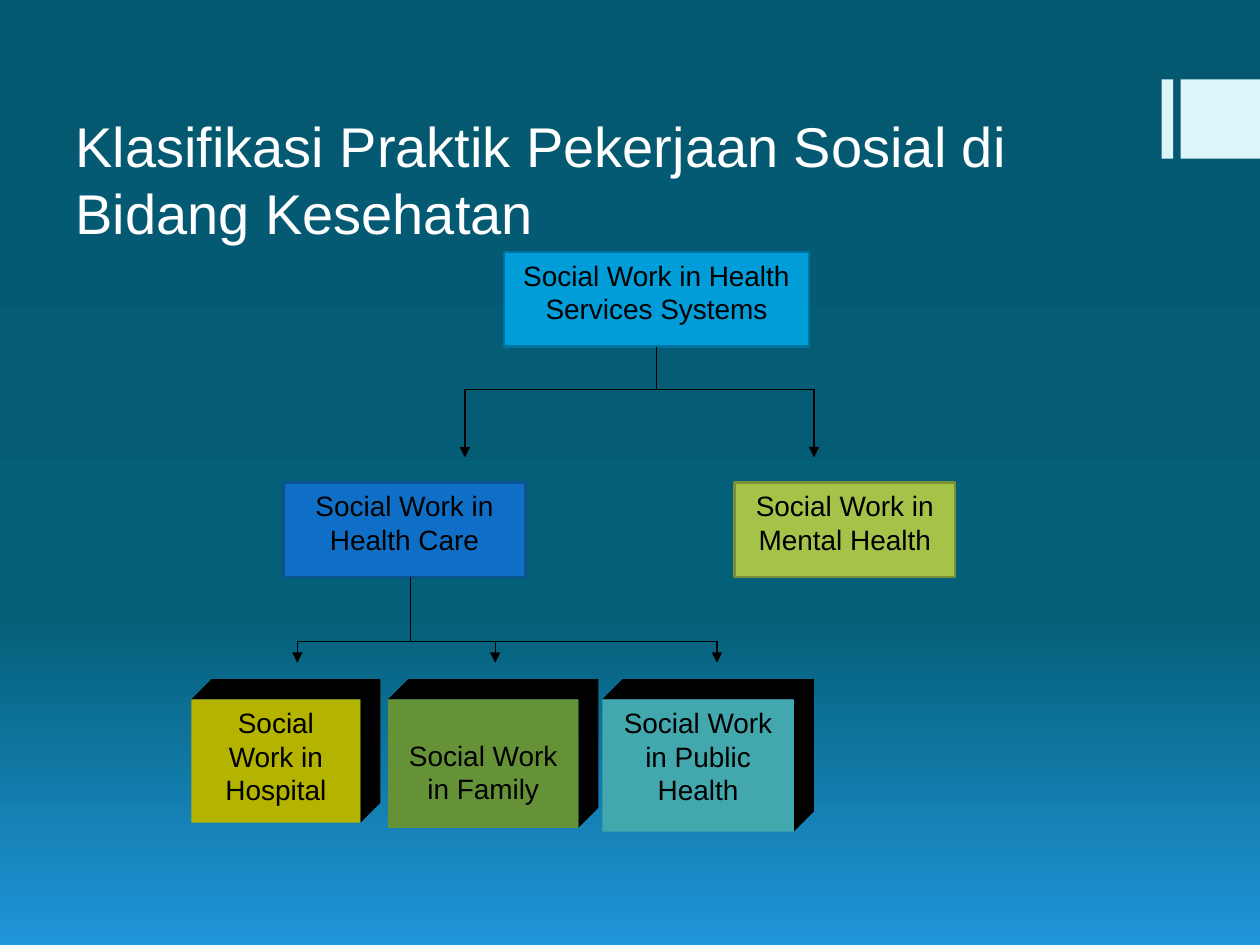
from copy import deepcopy

from pptx import Presentation
from pptx.dml.color import RGBColor
from pptx.enum.shapes import MSO_CONNECTOR, MSO_SHAPE
from pptx.enum.text import MSO_ANCHOR, PP_ALIGN
from pptx.oxml.ns import qn
from pptx.oxml.xmlchemy import OxmlElement
from pptx.util import Inches, Pt

RECTANGLE = MSO_SHAPE.RECTANGLE
STRAIGHT = MSO_CONNECTOR.STRAIGHT
TOP, BOTTOM = MSO_ANCHOR.TOP, MSO_ANCHOR.BOTTOM
LEFT, CENTER = PP_ALIGN.LEFT, PP_ALIGN.CENTER

BLACK = RGBColor(0x00, 0x00, 0x00)
WHITE = RGBColor(0xFF, 0xFF, 0xFF)
PALE = RGBColor(0xDB, 0xF5, 0xF9)
SKY, SKY_EDGE = RGBColor(0x00, 0x9D, 0xD9), RGBColor(0x00, 0x74, 0xA1)
BLUE, BLUE_EDGE = RGBColor(0x0F, 0x6F, 0xC6), RGBColor(0x0B, 0x52, 0x92)
LIME, LIME_EDGE = RGBColor(0xA5, 0xC2, 0x49), RGBColor(0x7A, 0x90, 0x36)
OLIVE = RGBColor(0xB3, 0xB3, 0x00)
GREEN = RGBColor(0x66, 0x92, 0x37)
TEAL = RGBColor(0x42, 0xA8, 0xAD)
BACKGROUND = [
    (0, RGBColor(0x04, 0x58, 0x70)),
    (0.65, RGBColor(0x04, 0x5F, 0x78)),
    (1, RGBColor(0x20, 0x95, 0xD9)),
]

WIDTH, HEIGHT = 10, 7.5
TITLE = "Klasifikasi Praktik Pekerjaan Sosial di Bidang Kesehatan"
TAB_TOP, TAB_SIZE = 0.63, 0.63
TABS = [(9.22, 0.09), (WIDTH - TAB_SIZE, TAB_SIZE)]

BOX_HEIGHT = 0.75
SYSTEM_TOP, BRANCH_TOP, FIELD_TOP = 2, 3.83, 5.55
SYSTEM = (4, SYSTEM_TOP, 2.42, ["Social Work in Health", "Services Systems"], SKY, SKY_EDGE)
CARE = (2.25, BRANCH_TOP, 1.92, ["Social Work in", "Health Care"], BLUE, BLUE_EDGE)
MENTAL = (5.83, BRANCH_TOP, 1.75, ["Social Work in Mental Health"], LIME, LIME_EDGE)

DEPTH = 0.16
MARGIN, LINE_HEIGHT = 0.05, 0.26
FIELDS = [
    (1.52, 1.34, 0.98, "Social Work in Hospital", OLIVE, 0),
    (3.08, 1.51, 1.02, "Social Work in Family", GREEN, 1),
    (4.78, 1.52, 1.05, "Social Work in Public Health", TEAL, 0),
]

SYSTEM_RAIL, SYSTEM_TIP, SYSTEM_DROPS = 3.09, 3.63, [3.69, 6.46]
CARE_RAIL, CARE_TIP, CARE_DROPS = 5.09, 5.26, [2.36, 3.93, 5.69]
CARE_STEM = 3.26


def set_all(target, values):
    for name, value in values.items():
        setattr(target, name, value)


def write(shape, lines, size, color, align, anchor, top=MARGIN):
    frame = shape.text_frame
    set_all(frame, {"word_wrap": True, "vertical_anchor": anchor, "margin_top": Inches(top)})
    for index, line in enumerate(lines):
        para = frame.add_paragraph() if index else frame.paragraphs[0]
        para.alignment = align
        span = para.add_run()
        span.text = line
        set_all(span.font, {"name": "Arial", "size": Pt(size)})
        span.font.color.rgb = color


def paint(shape, fill, edge=None):
    shape.shadow.inherit = False
    shape.fill.solid()
    shape.fill.fore_color.rgb = fill
    if edge is None:
        shape.line.fill.background()
    else:
        shape.line.color.rgb = edge
        shape.line.width = Pt(1.5)


def add_box(page, left, top, width, height, fill, edge=None):
    box = page.shapes.add_shape(RECTANGLE, *map(Inches, (left, top, width, height)))
    paint(box, fill, edge)
    return box


def add_labelled(page, left, top, width, lines, fill, edge):
    box = add_box(page, left, top, width, BOX_HEIGHT, fill, edge)
    write(box, lines, 16, BLACK, CENTER, TOP)
    return box


def add_block(page, left, width, height, text, fill, skipped_lines):
    right, bottom = left + width, FIELD_TOP + height
    outline = [
        (left + DEPTH, FIELD_TOP - DEPTH),
        (right + DEPTH, FIELD_TOP - DEPTH),
        (right + DEPTH, bottom - DEPTH),
        (right, bottom),
        (right, FIELD_TOP),
    ]
    builder = page.shapes.build_freeform(Inches(left), Inches(FIELD_TOP))
    builder.add_line_segments([(Inches(x), Inches(y)) for x, y in outline], close=True)
    paint(builder.convert_to_shape(), BLACK)
    face = add_box(page, left, FIELD_TOP, width, height, fill)
    write(face, [text], 16, BLACK, CENTER, TOP, MARGIN + skipped_lines * LINE_HEIGHT)


def add_line(page, start, end, arrow=False):
    line = page.shapes.add_connector(STRAIGHT, *map(Inches, start + end))
    line.line.color.rgb = BLACK
    line.line.width = Pt(0.75)
    line._element.spPr.append(OxmlElement("a:effectLst"))
    if arrow:
        tail = OxmlElement("a:tailEnd")
        tail.set("type", "triangle")
        line.line._get_or_add_ln().append(tail)
    return line


def add_branches(page, rail, tip, drops):
    add_line(page, (drops[0], rail), (drops[-1], rail))
    for x in drops:
        add_line(page, (x, rail), (x, tip), arrow=True)


def set_background(page):
    fill = page.background.fill
    fill.gradient()
    fill.gradient_angle = 270
    stops = page._element.find(".//" + qn("a:gsLst"))
    stops.append(deepcopy(stops[-1]))
    for stop, (position, color) in zip(fill.gradient_stops, BACKGROUND):
        stop.position = position
        stop.color.rgb = color


def main():
    deck = Presentation()
    set_all(deck, {"slide_width": Inches(WIDTH), "slide_height": Inches(HEIGHT)})
    page = deck.slides.add_slide(deck.slide_layouts[6])
    set_background(page)

    for left, width in TABS:
        add_box(page, left, TAB_TOP, width, TAB_SIZE, PALE)
    title = page.shapes.add_textbox(*map(Inches, (0.5, 0.83, 9, 1.17)))
    write(title, [TITLE], 32, WHITE, LEFT, BOTTOM)

    system, *_ = [add_labelled(page, *node) for node in (SYSTEM, CARE, MENTAL)]
    for field in FIELDS:
        add_block(page, *field)

    middle = SYSTEM[0] + SYSTEM[2] / 2
    stem = add_line(page, (middle, SYSTEM_TOP + BOX_HEIGHT), (middle, SYSTEM_RAIL))
    stem.begin_connect(system, 2)
    add_line(page, (CARE_STEM, BRANCH_TOP + BOX_HEIGHT), (CARE_STEM, CARE_RAIL))
    add_branches(page, SYSTEM_RAIL, SYSTEM_TIP, SYSTEM_DROPS)
    add_branches(page, CARE_RAIL, CARE_TIP, CARE_DROPS)

    deck.save("out.pptx")


if __name__ == "__main__":
    main()
